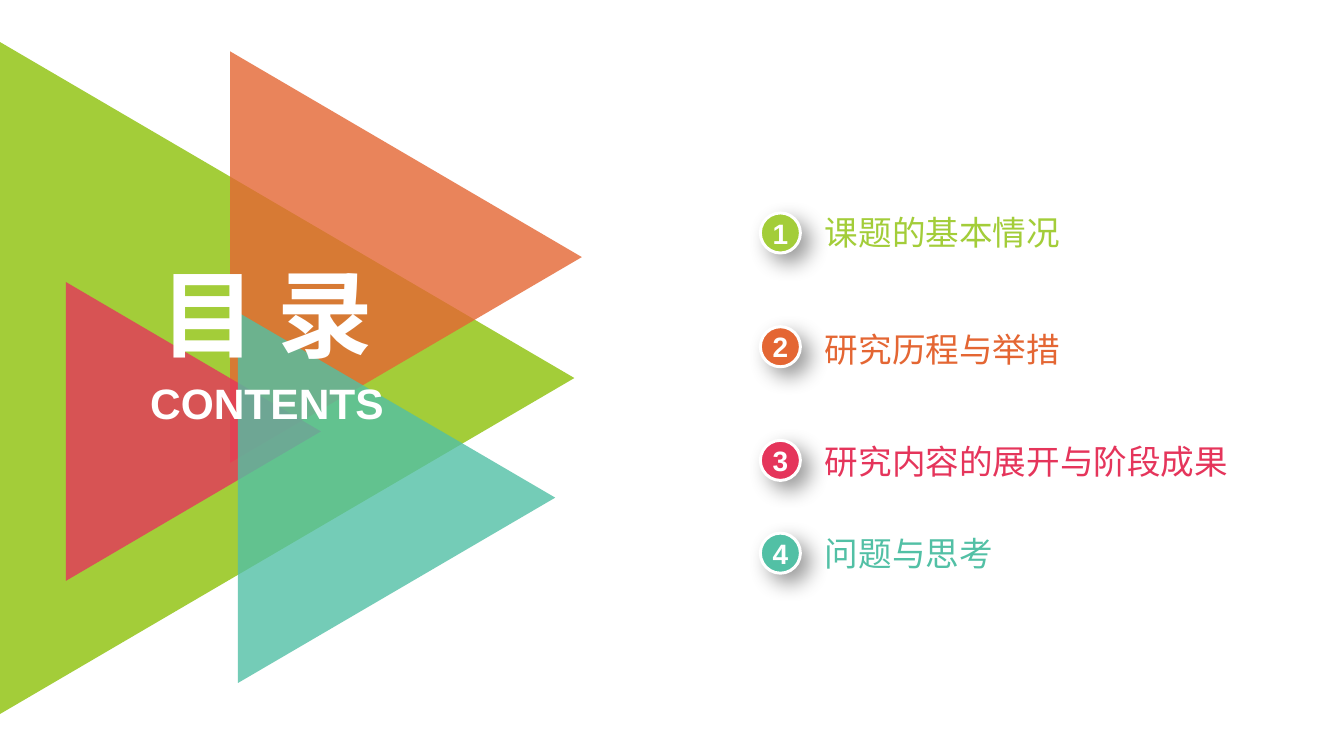
from dataclasses import dataclass

from lxml.etree import SubElement
from pptx import Presentation
from pptx.dml.color import RGBColor
from pptx.enum.shapes import MSO_SHAPE
from pptx.enum.text import MSO_ANCHOR, PP_ALIGN
from pptx.oxml.ns import qn
from pptx.util import Pt


@dataclass(frozen=True)
class Theme:
    font: str = "Arial"
    white: str = "FFFFFF"
    shadow: str = "000000"
    green: str = "A3CD39"
    orange: str = "E46633"
    red: str = "E5355B"
    teal: str = "52C0A5"
    title: float = 72
    subtitle: float = 32
    label: float = 25.3
    number: float = 21.1


THEME = Theme()
BADGE_LEFT, BADGE_SIZE = 572.8, 30.2
LABEL_LEFT, LABEL_HEIGHT = 621.4, 31

TRIANGLES = [
    (0, 31.7, 432.7, 506.2, THEME.green, 100),
    (173.3, 38.7, 265, 310, THEME.orange, 80),
    (49.6, 212.4, 192.2, 225.2, THEME.red, 80),
    (179.3, 235.3, 239, 279.2, THEME.teal, 80),
]

CHAPTERS = [
    ("课题的基本情况", THEME.green, 160.4, 159.1, 276),
    ("研究历程与举措", THEME.orange, 246.1, 247.6, 182),
    ("研究内容的展开与阶段成果", THEME.red, 331.7, 331.9, 329),
    ("问题与思考", THEME.teal, 401.6, 401.5, 182),
]


def write(s, text, size, color, bold=False, align=PP_ALIGN.LEFT, anchor=MSO_ANCHOR.MIDDLE):
    tf = s.text_frame
    tf.word_wrap = True
    tf.vertical_anchor = anchor
    tf.margin_left = tf.margin_top = tf.margin_right = tf.margin_bottom = 0
    p = tf.paragraphs[0]
    p.alignment = align
    r = p.add_run()
    r.text = text
    r.font.name = THEME.font
    r.font.size = Pt(size)
    r.font.bold = bold
    r.font.color.rgb = RGBColor.from_string(color)


def fill(s, color):
    s.shadow.inherit = False
    s.fill.solid()
    s.fill.fore_color.rgb = RGBColor.from_string(color)


def add_alpha(color_element, percent):
    SubElement(color_element, qn("a:alpha"), val=str(percent * 1000))


def add_triangle(slide, left, top, width, height, color, opacity):
    builder = slide.shapes.build_freeform(Pt(left), Pt(top))
    builder.add_line_segments(
        [(Pt(left + width), Pt(top + height / 2)), (Pt(left), Pt(top + height))]
    )
    s = builder.convert_to_shape()
    fill(s, color)
    s.line.fill.background()
    if opacity < 100:
        add_alpha(s.element.spPr.find(".//" + qn("a:srgbClr")), opacity)


def cast_shadow(s):
    effects = s.element.spPr.find(qn("a:effectLst"))
    shadow = SubElement(
        effects, qn("a:outerShdw"), blurRad=str(Pt(16)), dist=str(Pt(9)),
        dir=str(45 * 60000), algn="tl", rotWithShape="0",
    )
    add_alpha(SubElement(shadow, qn("a:srgbClr"), val=THEME.shadow), 40)


def add_badge(slide, number, top, color):
    s = slide.shapes.add_shape(
        MSO_SHAPE.OVAL, Pt(BADGE_LEFT), Pt(top), Pt(BADGE_SIZE), Pt(BADGE_SIZE)
    )
    fill(s, color)
    s.line.color.rgb = RGBColor.from_string(THEME.white)
    s.line.width = Pt(2.25)
    cast_shadow(s)
    write(s, str(number), THEME.number, THEME.white, True, PP_ALIGN.CENTER)


def add_text(slide, left, top, width, height, *content):
    s = slide.shapes.add_textbox(Pt(left), Pt(top), Pt(width), Pt(height))
    write(s, *content)


def main():
    prs = Presentation()
    prs.slide_width, prs.slide_height = Pt(1012.5), Pt(569.5)
    slide = prs.slides.add_slide(prs.slide_layouts[6])
    for triangle in TRIANGLES:
        add_triangle(slide, *triangle)
    for number, (text, color, badge_top, label_top, width) in enumerate(CHAPTERS, 1):
        add_badge(slide, number, badge_top, color)
        add_text(slide, LABEL_LEFT, label_top, width, LABEL_HEIGHT, text, THEME.label, color)
    add_text(slide, 97.9, 191.5, 206.6, 87.1,
             "目 录", THEME.title, THEME.white, True, PP_ALIGN.CENTER)
    add_text(slide, 109.4, 284.4, 183.6, 38.9,
             "CONTENTS", THEME.subtitle, THEME.white, True, PP_ALIGN.CENTER, MSO_ANCHOR.TOP)
    prs.save("out.pptx")


if __name__ == "__main__":
    main()
